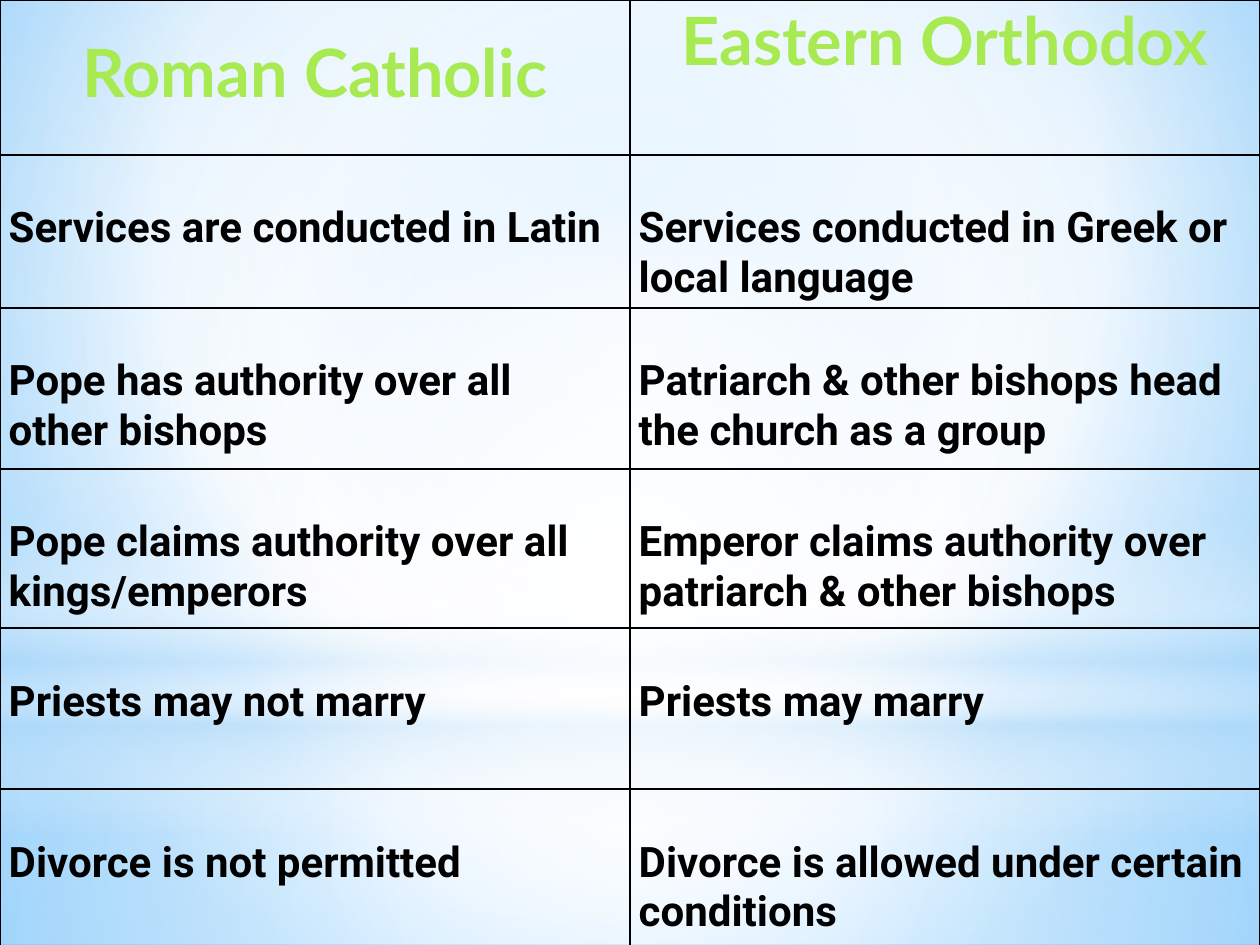
import lxml.etree
import pptx
import pptx.dml.color
import pptx.enum.shapes
import pptx.enum.text
import pptx.oxml
import pptx.oxml.ns
import pptx.util

Pt = pptx.util.Pt
RGB = pptx.dml.color.RGBColor
SHAPE = pptx.enum.shapes.MSO_SHAPE
ALIGN = pptx.enum.text.PP_ALIGN
qn = pptx.oxml.ns.qn

WHITE = RGB(0xFF, 0xFF, 0xFF)
BLACK = RGB(0, 0, 0)
LIME = RGB(0xA7, 0xEA, 0x52)
PALE = RGB(0xB4, 0xDC, 0xFA)
SKY = RGB(0x9E, 0xD5, 0xFF)
BLUE = RGB(0x5B, 0xB9, 0xFF)

WIDE, HIGH = 720, 540
HEADS = ["Roman Catholic", "Eastern Orthodox"]
ROWS = [
    ("Services are conducted in Latin",
     "Services conducted in Greek or local language"),
    ("Pope has authority over all other bishops",
     "Patriarch & other bishops head the church as a group"),
    ("Pope claims authority over all kings/emperors",
     "Emperor claims authority over patriarch & other bishops"),
    ("Priests may not marry", "Priests may marry"),
    ("Divorce is not permitted",
     "Divorce is allowed under certain conditions"),
]
TALL = [88.5, 87.5, 92, 91, 92, 92]


def add(node, tag, **attrs):
    """Append a drawing element and return it."""
    return lxml.etree.SubElement(
        node, qn(tag), {key: str(val) for key, val in attrs.items()})


def blend(fill, node, stops, rect=None, angle=0):
    """Set a gradient from (position, colour, opacity) stops in percent."""
    fill.gradient()
    grad = next(node.iter(qn("a:gradFill")))
    for child in list(grad):
        grad.remove(child)
    group = add(grad, "a:gsLst")
    for spot, color, alpha in stops:
        stop = add(group, "a:gs", pos=spot * 1000)
        tint = add(stop, "a:srgbClr", val=color)
        if alpha < 100:
            add(tint, "a:alpha", val=alpha * 1000)
    if rect:
        shade = add(grad, "a:path", path="circle")
        add(shade, "a:fillToRect",
            **{side: val * 1000 for side, val in zip("ltrb", rect)})
    else:
        add(grad, "a:lin", ang=angle * 60000, scaled=0)


def glow(slide, kind, box, stops, **form):
    """Place one borderless gradient shape."""
    shape = slide.shapes.add_shape(kind, *map(Pt, box))
    shape.shadow.inherit = False
    shape.line.fill.background()
    blend(shape.fill, shape.element, stops, **form)


def backdrop(slide, left, top, width, height):
    """Sky-like background, built from layered gradients."""
    blend(slide.background.fill, slide.element,
          [(0, SKY, 100), (60, WHITE, 100), (100, BLUE, 100)],
          rect=(20, 10, 20, 60))
    mid = (50, 50, 50, 50)
    split = 402
    # Lower and upper panels
    glow(slide, SHAPE.RECTANGLE, (left, top + split, width, height - split),
         [(0, WHITE, 91), (37, WHITE, 76), (100, PALE, 79)], rect=mid)
    glow(slide, SHAPE.RECTANGLE, (left, top, width, split),
         [(0, WHITE, 89), (48, WHITE, 62), (100, PALE, 79)], rect=mid)
    # Horizon band
    glow(slide, SHAPE.RECTANGLE, (left, top + 297, width, 180),
         [(0, WHITE, 0), (29, WHITE, 30), (45, PALE, 40),
          (55, WHITE, 26), (65, PALE, 60), (100, WHITE, 0)], angle=90)
    # Central light
    glow(slide, SHAPE.OVAL, (left, top + 126, width, split),
         [(0, WHITE, 100), (56, WHITE, 0)], rect=mid)


def write(cell, text, size=24, font="Roboto", color=BLACK,
          align=ALIGN.LEFT, drop=28):
    """Fill a cell with bold text, set down from its top edge."""
    cell.margin_left = cell.margin_right = Pt(5)
    cell.margin_top, cell.margin_bottom = Pt(drop), 0
    para = cell.text_frame.paragraphs[0]
    para.alignment = align
    run = para.add_run()
    run.text = text
    run.font.size, run.font.name, run.font.bold = Pt(size), font, True
    run.font.color.rgb = color


def border(cell):
    """Draw a black line on every side and leave the cell clear."""
    cell.fill.background()
    props = cell._tc.get_or_add_tcPr()
    for place, side in enumerate(("a:lnL", "a:lnR", "a:lnT", "a:lnB")):
        line = pptx.oxml.parse_xml(
            f'<{side} {pptx.oxml.ns.nsdecls("a")} w="{Pt(1)}"><a:solidFill>'
            f'<a:srgbClr val="{BLACK}"/></a:solidFill></{side}>')
        props.insert(place, line)


def compare(slide, left, top, width):
    """Table of the two churches side by side."""
    frame = slide.shapes.add_table(
        len(TALL), len(HEADS), Pt(left), Pt(top), Pt(width), Pt(sum(TALL)))
    table = frame.table
    table.first_row = table.horz_banding = False
    for col in table.columns:
        col.width = Pt(width / len(HEADS))
    for row, tall in zip(table.rows, TALL):
        row.height = Pt(tall)
    # Headings
    for col, (text, drop) in enumerate(zip(HEADS, (18, 0))):
        write(table.cell(0, col), text, size=38, font="Lato", color=LIME,
              align=ALIGN.CENTER, drop=drop)
    # Points of difference
    for row, pair in enumerate(ROWS, 1):
        for col, text in enumerate(pair):
            write(table.cell(row, col), text)
    for cell in table.iter_cells():
        border(cell)


def main():
    deck = pptx.Presentation()
    deck.slide_width, deck.slide_height = Pt(WIDE), Pt(HIGH)
    slide = deck.slides.add_slide(deck.slide_layouts[6])
    backdrop(slide, 0, 0, WIDE, HIGH)
    compare(slide, 0, 0, WIDE)
    deck.save("out.pptx")


if __name__ == "__main__":
    main()
